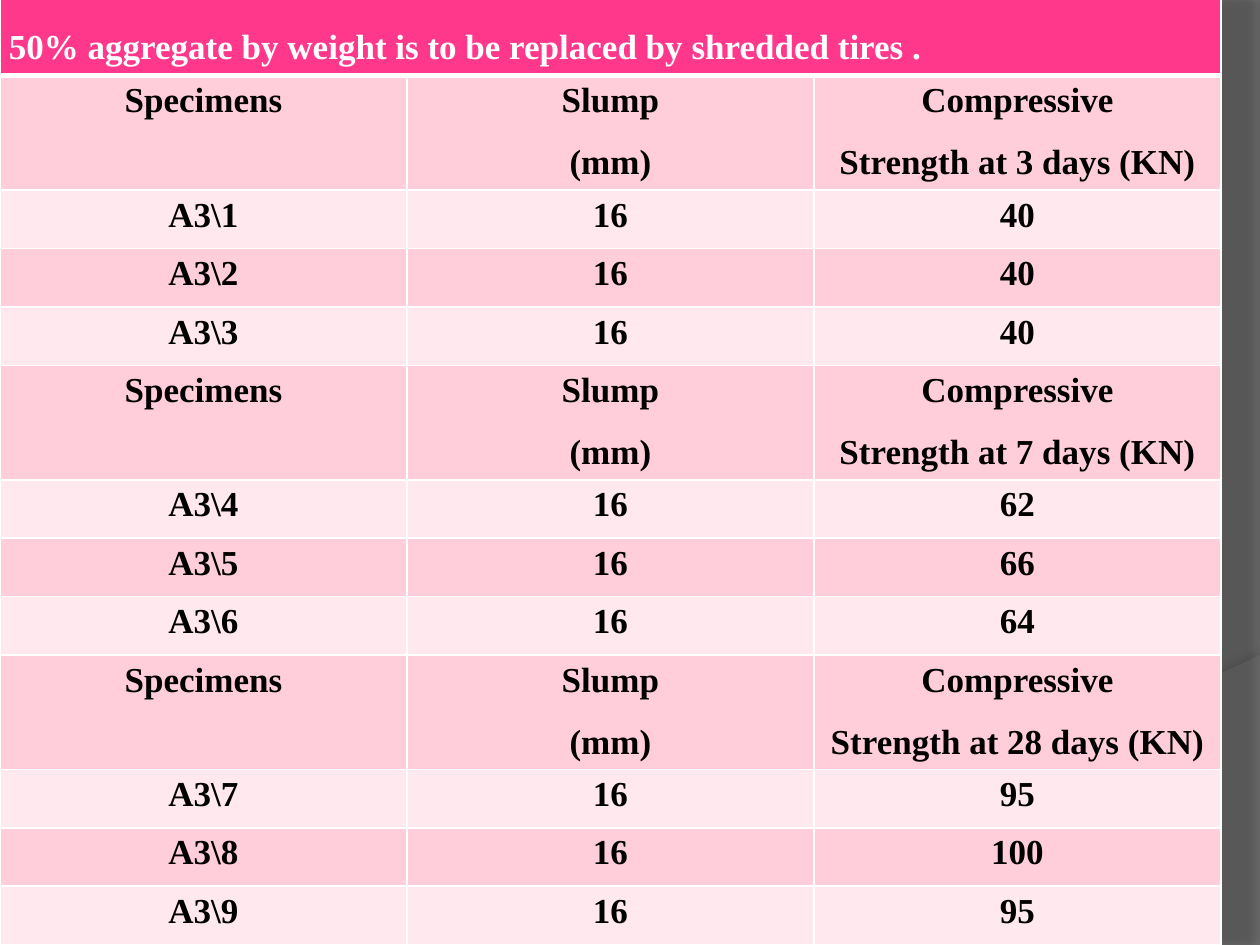
from typing import NamedTuple

from lxml.etree import SubElement
from pptx import Presentation
from pptx.dml.color import RGBColor
from pptx.enum.text import PP_ALIGN as Align
from pptx.oxml.ns import qn
from pptx.util import Inches, Pt

SLIDE_WIDTH, SLIDE_HEIGHT = 10, 7.5
TABLE_TOP, TABLE_WIDTH, TABLE_HEIGHT = -0.31, 9.69, 7.81
COLUMNS = 3
TALL_ROW = 0.91
TITLE_DROP = 0.49
SIDE_INSET = 0.07
FONT = "Times New Roman"
PINK, ROSE, BLUSH = "FF388C", "FFCEDA", "FFE8EE"
WHITE, BLACK = "FFFFFF", "000000"
CURVE_STEPS = 40
TITLE = "50% aggregate by weight is to be replaced by shredded tires ."

Point = tuple[float, float]


class TestGroup(NamedTuple):
    days: int
    strengths: tuple[int, ...]


class Wave(NamedTuple):
    corners: list[Point]
    curve: tuple[Point, Point, Point, Point]
    color: str
    opacity: int
    shadow_opacity: int
    shadow_distance: float
    shadow_angle: int


SLUMP = 16
GROUPS = [
    TestGroup(3, (40, 40, 40)),
    TestGroup(7, (62, 66, 64)),
    TestGroup(28, (95, 100, 95)),
]
WAVES = [
    Wave([(0, 7.05), (0, 7.5), (10, 7.5)],
         ((10, 5.2), (5.59, 7.29), (3.91, 7.19), (0, 7.05)),
         "7F7F7F", 45, 35, 3.5, 270),
    Wave([(10, 0.02), (10, 7.5)],
         ((8.21, 7.5), (9.35, 6.19), (10.18, 3), (8, 0)),
         "5E5E5E", 40, 45, 4, 180),
]


def rgb(color: str) -> RGBColor:
    return RGBColor.from_string(color)


def set_opacity(color_element, percent: int) -> None:
    SubElement(color_element, qn("a:alpha"), val=str(percent * 1000))


def curve_points(curve: tuple[Point, ...]) -> list[Point]:
    """Sample a cubic Bezier curve at equal parameter steps."""
    points = []
    for step in range(CURVE_STEPS + 1):
        t = step / CURVE_STEPS
        weights = ((1 - t) ** 3, 3 * t * (1 - t) ** 2, 3 * t**2 * (1 - t), t**3)
        points.append(tuple(
            sum(weight * point[axis] for weight, point in zip(weights, curve))
            for axis in (0, 1)))
    return points


def add_wave(slide, wave: Wave) -> None:
    start, *rest = [
        (Inches(x), Inches(y)) for x, y in wave.corners + curve_points(wave.curve)]
    builder = slide.shapes.build_freeform(*start)
    builder.add_line_segments(rest, close=True)
    shape = builder.convert_to_shape()
    shape.fill.solid()
    shape.fill.fore_color.rgb = rgb(wave.color)
    shape.line.fill.background()
    shape.shadow.inherit = False
    properties = shape._element.spPr
    set_opacity(properties.find(qn("a:solidFill"))[0], wave.opacity)
    shadow = SubElement(
        properties.find(qn("a:effectLst")), qn("a:outerShdw"),
        blurRad=str(Pt(4)), dist=str(Pt(wave.shadow_distance)),
        dir=str(wave.shadow_angle * 60000), algn="ctr", rotWithShape="0")
    set_opacity(SubElement(shadow, qn("a:srgbClr"), val=BLACK), wave.shadow_opacity)


def add_borders(cell, top: float = 1, bottom: float = 1) -> None:
    """Add white borders; call before filling, as lines precede the fill."""
    properties = cell._tc.get_or_add_tcPr()
    for side, width in (("L", 1), ("R", 1), ("T", top), ("B", bottom)):
        line = SubElement(properties, qn(f"a:ln{side}"), w=str(Pt(width)))
        fill = SubElement(line, qn("a:solidFill"))
        SubElement(fill, qn("a:srgbClr"), val=WHITE)


def fill_cell(cell, text: str, background: str, color: str = BLACK,
              align: Align = Align.CENTER) -> None:
    cell.fill.solid()
    cell.fill.fore_color.rgb = rgb(background)
    cell.margin_left = cell.margin_right = Inches(SIDE_INSET)
    cell.margin_top = cell.margin_bottom = 0
    cell.text = text
    for para in cell.text_frame.paragraphs:
        para.alignment = align
        para.line_spacing = 1.15
        para.space_after = Pt(10)
        para.font.name = FONT
        para.font.size = Pt(20)
        para.font.bold = True
        para.font.color.rgb = rgb(color)


def table_rows() -> list[tuple[str, ...]]:
    rows, specimen = [], 0
    for group in GROUPS:
        rows.append(("Specimens", "Slump\n(mm)",
                     f"Compressive\nStrength at {group.days} days (KN)"))
        for strength in group.strengths:
            specimen += 1
            rows.append((f"A3\\{specimen}", str(SLUMP), str(strength)))
    return rows


def add_results_table(slide) -> None:
    rows = table_rows()
    tall_count = 1 + len(GROUPS)
    short_row = (TABLE_HEIGHT - tall_count * TALL_ROW) / (len(rows) + 1 - tall_count)
    table = slide.shapes.add_table(
        len(rows) + 1, COLUMNS, 0, Inches(TABLE_TOP),
        Inches(TABLE_WIDTH), Inches(TABLE_HEIGHT)).table

    for column in range(COLUMNS):
        add_borders(table.cell(0, column), bottom=3)
    title = table.cell(0, 0)
    title.merge(table.cell(0, COLUMNS - 1))
    fill_cell(title, TITLE, PINK, WHITE, Align.LEFT)
    title.margin_top = Inches(TITLE_DROP)
    table.rows[0].height = Inches(TALL_ROW)

    for row, texts in enumerate(rows, start=1):
        is_heading = "\n" in texts[-1]
        table.rows[row].height = Inches(TALL_ROW if is_heading else short_row)
        for column, text in enumerate(texts):
            cell = table.cell(row, column)
            add_borders(cell, top=3 if row == 1 else 1)
            fill_cell(cell, text, ROSE if row % 2 else BLUSH)


def main() -> None:
    deck = Presentation()
    deck.slide_width, deck.slide_height = Inches(SLIDE_WIDTH), Inches(SLIDE_HEIGHT)
    slide = deck.slides.add_slide(deck.slide_layouts[6])
    slide.background.fill.solid()
    slide.background.fill.fore_color.rgb = rgb("666666")
    for wave in WAVES:
        add_wave(slide, wave)
    add_results_table(slide)
    deck.save("out.pptx")


if __name__ == "__main__":
    main()
